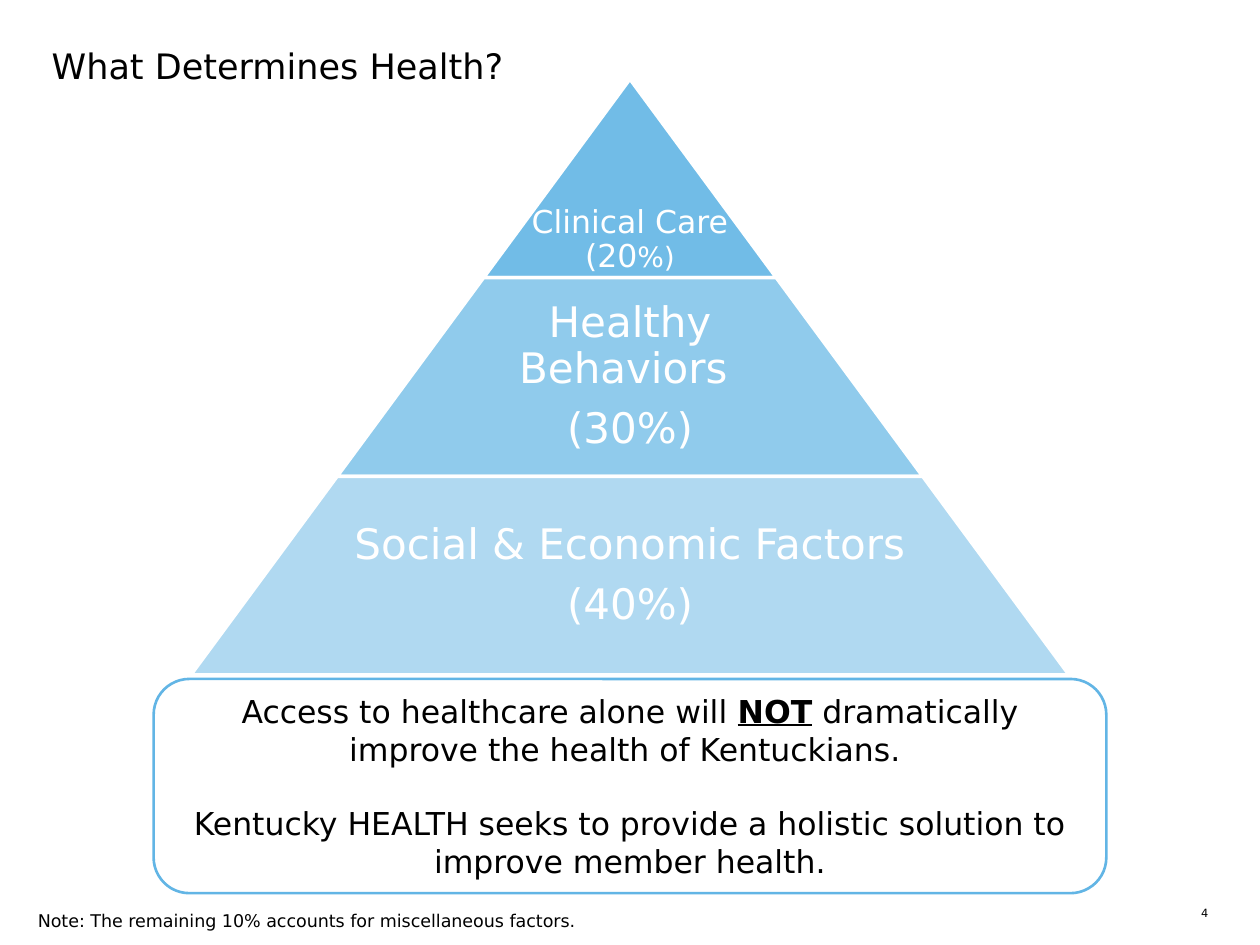
from pptx import Presentation
from pptx.util import Pt
from pptx.dml.color import RGBColor
from pptx.enum.shapes import MSO_SHAPE
from pptx.enum.text import MSO_ANCHOR, PP_ALIGN
from lxml.etree import SubElement
from pptx.oxml.ns import qn

# Content: a paragraph is a list of (text, size, strong) runs
TITLE = [[("What Determines Health?", 20, False)]]
TIERS = [  # opacity %, share of width for text, anchor, paragraphs
    (90, 1, MSO_ANCHOR.BOTTOM,
     [[("Clinical Care (20", 18, False), ("%)", 16, False)]]),
    (70, 0.65, MSO_ANCHOR.MIDDLE,
     [[("Healthy Behaviors ", 24, False)], [("(30%)", 24, False)]]),
    (50, 0.65, MSO_ANCHOR.MIDDLE,
     [[("Social & Economic Factors ", 24, False)], [("(40%)", 24, False)]]),
]
CLAIM = [
    [("Access to healthcare alone will ", 18, False), ("NOT", 18, True),
     (" dramatically improve the health of Kentuckians. ", 18, False)],
    [("Kentucky HEALTH seeks to provide a holistic solution to "
      "improve member health.", 18, False)],
]
NOTE = [[("Note: The remaining 10% accounts for miscellaneous factors.", 10, False)]]
PAGE = [[("4", 6.5, False)]]

FONT, BLUE, WHITE, BLACK = "DejaVu Sans", "62B5E5", "FFFFFF", "000000"
MID, TOP, HIGH, WIDE = 360, 45.2, 113.5, 167.3  # pyramid axis, top, tier size


def color(code):
    return RGBColor.from_string(code)


def write(shape, paras, ink=BLACK, align=PP_ALIGN.LEFT, anchor=MSO_ANCHOR.TOP,
          inset=0, line=None, after=0, gap=0):
    frame = shape.text_frame
    frame.word_wrap = True
    frame.vertical_anchor = anchor
    frame.margin_left = frame.margin_right = Pt(inset)
    frame.margin_top = frame.margin_bottom = Pt(inset)
    for i, runs in enumerate(paras):
        para = frame.add_paragraph() if i else frame.paragraphs[0]
        para.alignment = align
        para.space_before = Pt(gap if i else 0)
        para.space_after = Pt(after * runs[0][1])
        if line:
            para.line_spacing = line
        for text, size, strong in runs:
            run = para.add_run()
            run.text = text
            font = run.font
            font.name, font.size = FONT, Pt(size)
            font.bold = font.underline = strong
            font.color.rgb = color(ink)


def draw(kind, box, fill, edge, width):
    shape = slide.shapes.add_shape(kind, *map(Pt, box))
    shape.shadow.inherit = False
    shape.fill.solid()
    shape.fill.fore_color.rgb = color(fill)
    shape.line.color.rgb = color(edge)
    shape.line.width = Pt(width)
    return shape


def label(box, paras, **style):
    write(slide.shapes.add_textbox(*map(Pt, box)), paras, **style)


deck = Presentation()
deck.slide_width, deck.slide_height = Pt(720), Pt(540)
slide = deck.slides.add_slide(deck.slide_layouts[5])

# Title
title = slide.shapes.title
title.left, title.top, title.width, title.height = map(Pt, (29.5, 25.2, 661, 26.6))
write(title, TITLE)

# Pyramid: each tier is one step wider than the tier above
for i, (alpha, share, anchor, paras) in enumerate(TIERS):
    wide, y = WIDE * (i + 1), TOP + HIGH * i
    tier = draw(MSO_SHAPE.TRAPEZOID, (MID - wide / 2, y, wide, HIGH), BLUE, WHITE, 2)
    tier.adjustments[0] = WIDE / 2 / HIGH
    tint = tier.fill._xPr.find(".//" + qn("a:srgbClr"))
    SubElement(tint, qn("a:alpha"), val=str(alpha * 1000))
    room = wide * share
    label((MID - room / 2, y, room, HIGH), paras, ink=WHITE, align=PP_ALIGN.CENTER,
          anchor=anchor, inset=2.2, line=0.9, after=0.35)

# Claim under the pyramid
claim = draw(MSO_SHAPE.ROUNDED_RECTANGLE, (87.8, 388, 544.4, 122.4), WHITE, BLUE, 1.5)
write(claim, CLAIM, align=PP_ALIGN.CENTER, anchor=MSO_ANCHOR.MIDDLE, inset=7.2, gap=21)

# Note and page number
label((21.6, 519.8, 425.5, 12.2), NOTE)
label((672.5, 517.7, 18, 8), PAGE, align=PP_ALIGN.RIGHT)

deck.save("out.pptx")
